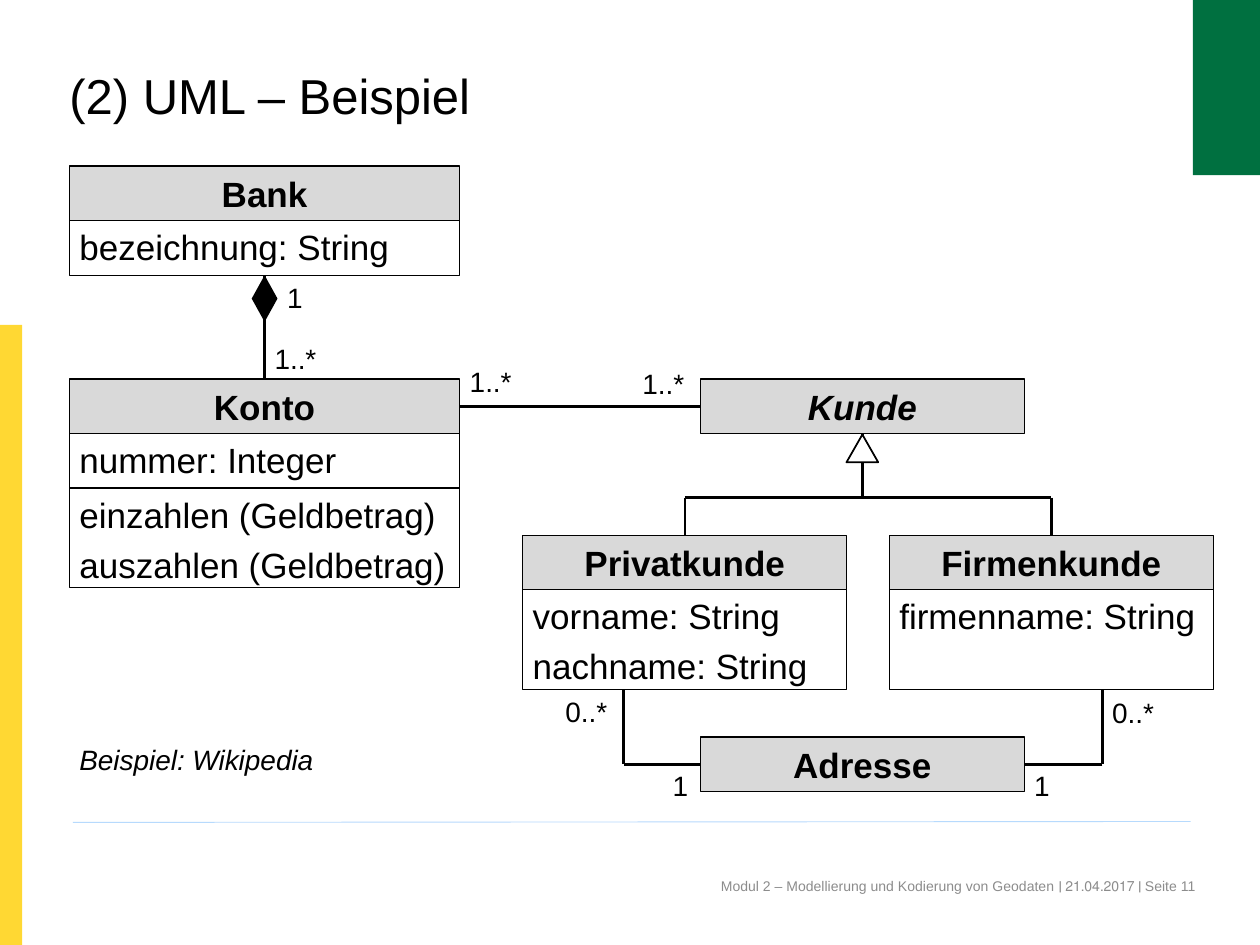
"""Build the UML example slide with classes, links and multiplicities."""
from itertools import pairwise

from lxml.etree import SubElement
from pptx import Presentation
from pptx.dml.color import RGBColor
from pptx.enum.shapes import MSO_CONNECTOR, MSO_SHAPE
from pptx.enum.text import PP_ALIGN
from pptx.oxml.ns import qn
from pptx.util import Cm, Pt

THEME = {
    "font": "Arial", "ink": "000000", "head": "D9D9D9", "paper": "FFFFFF",
    "foot": "8C8C8C", "rule": "B7DAFD", "gold": "FFD833", "green": "007040",
    "title": 28, "body": 20, "label": 16, "small": 8,
    "edge": 0.75, "link": 1.5, "tip": 1, "thin": 0.5,
}
ROW, PAIR = 1.1, 2.01
WIDE, SLIM = 7.87, 6.53
LEFT, MID = 1.4, 14.12
PRIV, FIRM = 10.54, 17.93
TOP, MAIN, SUB, BASE = 3.35, 7.64, 10.79, 14.86

TITLE = "(2) UML – Beispiel"
FOOT = "Modul 2 – Modellierung und Kodierung von Geodaten ׀ 21.04.2017 ׀ Seite 11"
NOTE = "Beispiel: Wikipedia"
BANDS = [("gold", 0, 6.55, 0.45, 12.5), ("green", 24.05, -0.05, 1.35, 3.58)]
CLASSES = [
    ("Bank", LEFT, TOP, WIDE, False, [(ROW, ["bezeichnung: String"])]),
    ("Konto", LEFT, MAIN, WIDE, False, [
        (ROW, ["nummer: Integer"]),
        (PAIR, ["einzahlen (Geldbetrag)", "auszahlen (Geldbetrag)"])]),
    ("Kunde", MID, MAIN, SLIM, True, []),
    ("Privatkunde", PRIV, SUB, SLIM, False,
     [(PAIR, ["vorname: String", "nachname: String"])]),
    ("Firmenkunde", FIRM, SUB, SLIM, False, [(PAIR, ["firmenname: String"])]),
    ("Adresse", MID, BASE, SLIM, False, []),
]

BANK = LEFT + WIDE / 2
KIND = MID + SLIM / 2
ENDS = (PRIV + SLIM / 2, FIRM + SLIM / 2)
FORK = 10.03
FLOOR = SUB + ROW + PAIR
HOME = BASE + ROW / 2
WEST, EAST = 12.57, 22.22
LINKS = [
    [(BANK, MAIN), (BANK, TOP + 2 * ROW)],
    [(LEFT + WIDE, MAIN + ROW / 2), (MID, MAIN + ROW / 2)],
    [(ENDS[0], SUB), (ENDS[0], FORK), (ENDS[1], FORK), (ENDS[1], SUB)],
    [(KIND, FORK), (KIND, MAIN + ROW)],
    [(WEST, FLOOR), (WEST, HOME), (MID, HOME)],
    [(EAST, FLOOR), (EAST, HOME), (MID + SLIM, HOME)],
]
LABELS = [
    ("1..*", BANK, 6.78), ("1", 5.59, 5.56),
    ("1..*", LEFT + WIDE, 7.24), ("1..*", 12.75, 7.29),
    ("0..*", 11.2, FLOOR), ("0..*", EAST, 13.92),
    ("1", 13.36, 15.39), ("1", MID + SLIM, 15.39),
]


def tint(key):
    return RGBColor.from_string(THEME[key])


def write(shape, lines, size, color="ink", bold=False, slant=False,
          align=PP_ALIGN.LEFT, pads=(0.2, 0.1, 0.2, 0.1), pitch=None):
    frame = shape.text_frame
    frame.word_wrap = True
    (frame.margin_left, frame.margin_top,
     frame.margin_right, frame.margin_bottom) = map(Cm, pads)
    for i, line in enumerate(lines):
        para = frame.add_paragraph() if i else frame.paragraphs[0]
        para.alignment = align
        para.space_before = Pt(4.6 if i else 0)
        if pitch:
            para.line_spacing = Pt(pitch)
        run = para.add_run()
        run.text = line
        font = run.font
        font.name, font.size = THEME["font"], Pt(THEME[size])
        font.bold, font.italic = bold, slant
        font.color.rgb = tint(color)


def text(slide, box, line, size, **style):
    write(slide.shapes.add_textbox(*map(Cm, box)), [line], size, **style)


def form(slide, kind, box, fill=None, width=None):
    shape = slide.shapes.add_shape(kind, *map(Cm, box))
    shape.shadow.inherit = False
    if fill:
        shape.fill.solid()
        shape.fill.fore_color.rgb = tint(fill)
    else:
        shape.fill.background()
    if width:
        shape.line.color.rgb = tint("ink")
        shape.line.width = Pt(THEME[width])
    else:
        shape.line.fill.background()
    return shape


def link(slide, start, end, color="ink", width="link"):
    line = slide.shapes.add_connector(
        MSO_CONNECTOR.STRAIGHT, *map(Cm, (*start, *end)))
    line.line.color.rgb = tint(color)
    line.line.width = Pt(THEME[width])
    SubElement(line._element.spPr, qn("a:effectLst"))


def entry(slide, name, x, y, w, slant, parts):
    head = form(slide, MSO_SHAPE.RECTANGLE, (x, y, w, ROW), "head", "edge")
    write(head, [name], "body", bold=True, slant=slant, align=PP_ALIGN.CENTER)
    y += ROW
    for high, lines in parts:
        part = form(slide, MSO_SHAPE.RECTANGLE, (x, y, w, high), width="edge")
        part.text_frame.vertical_anchor = 1
        write(part, lines, "body")
        y += high


def main():
    deck = Presentation()
    deck.slide_width, deck.slide_height = Cm(25.4), Cm(19.05)
    slide = deck.slides.add_slide(deck.slide_layouts[6])
    for fill, *box in BANDS:
        form(slide, MSO_SHAPE.RECTANGLE, box, fill)
    text(slide, (12.7, 17.7, 11.4, 1.02), FOOT, "small", color="foot",
         align=PP_ALIGN.RIGHT, pads=(0, 0, 0, 0.13))
    link(slide, (1.47, 16.58), (24, 16.56), "rule", "thin")
    text(slide, (LEFT, 1.35, 14.22, 2.57), TITLE, "title",
         pads=(0, 0, 0, 0), pitch=33)
    for item in CLASSES:
        entry(slide, *item)
    form(slide, MSO_SHAPE.DIAMOND,
         (BANK - 0.26, TOP + 2 * ROW, 0.52, 0.94), "ink")
    for route in LINKS:
        for start, end in pairwise(route):
            link(slide, start, end)
    form(slide, MSO_SHAPE.ISOSCELES_TRIANGLE,
         (KIND - 0.32, MAIN + ROW + 0.02, 0.64, 0.56), "paper", "tip")
    for line, x, y in LABELS:
        text(slide, (x, y, 1.52, ROW), line, "label")
    text(slide, (LEFT, BASE, WIDE, ROW), NOTE, "label", slant=True)
    deck.save("out.pptx")


if __name__ == "__main__":
    main()
